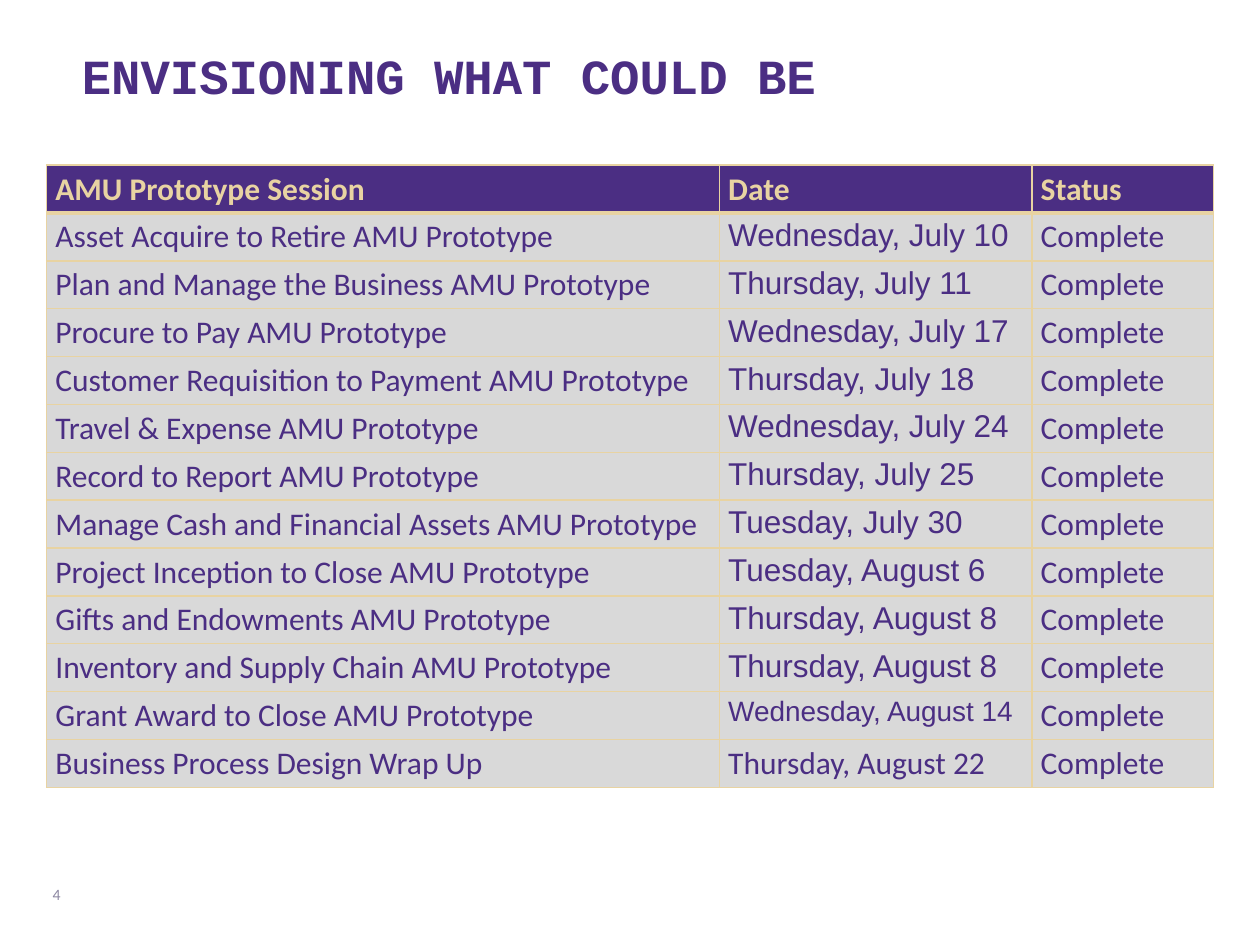
from lxml.etree import SubElement
from pptx import Presentation
from pptx.dml.color import RGBColor
from pptx.enum.text import MSO_ANCHOR as Anchor, PP_ALIGN as Align
from pptx.oxml.ns import qn
from pptx.util import Inches, Pt

COLORS = {
    "purple": "4B2E83",
    "gold": "E8D3A2",
    "upper_row": "D8D8D8",
    "lower_row": "D9D9D9",
    "number": "8D88A2",
}
HEADINGS = ["AMU Prototype Session", "Date", "Status"]
SESSIONS = [
    ("Asset Acquire to Retire AMU Prototype", "Wednesday, July 10"),
    ("Plan and Manage the Business AMU Prototype", "Thursday, July 11"),
    ("Procure to Pay AMU Prototype", "Wednesday, July 17"),
    ("Customer Requisition to Payment AMU Prototype", "Thursday, July 18"),
    ("Travel & Expense AMU Prototype", "Wednesday, July 24"),
    ("Record to Report AMU Prototype", "Thursday, July 25"),
    ("Manage Cash and Financial Assets AMU Prototype", "Tuesday, July 30"),
    ("Project Inception to Close AMU Prototype", "Tuesday, August 6"),
    ("Gifts and Endowments AMU Prototype", "Thursday, August 8"),
    ("Inventory and Supply Chain AMU Prototype", "Thursday, August 8"),
    ("Grant Award to Close AMU Prototype", "Wednesday, August 14"),
    ("Business Process Design Wrap Up", "Thursday, August 22"),
]
COLUMN_WIDTHS = [5.34, 2.48, 1.44]
ROW_HEIGHT = 0.3
UPPER_ROWS = 5


def rgb(name):
    return RGBColor.from_string(COLORS[name])


def style_text(text_frame, size, font_name, color, bold=False):
    for para in text_frame.paragraphs:
        for span in para.runs:
            span.font.size = Pt(size)
            span.font.name = font_name
            span.font.bold = bold
            span.font.color.rgb = rgb(color)


def set_margins(target):
    target.margin_left = target.margin_right = Inches(0.07)
    target.margin_top = target.margin_bottom = Inches(0.04)


def set_borders(cell, top, bottom):
    properties = cell._tc.get_or_add_tcPr()
    for side, width in (("L", 1), ("R", 1), ("T", top), ("B", bottom)):
        line = SubElement(properties, qn(f"a:ln{side}"), w=str(Pt(width)))
        fill = SubElement(line, qn("a:solidFill"))
        SubElement(fill, qn("a:srgbClr"), val=COLORS["gold"])


def add_title(page, left, top, width, height):
    title = page.shapes.title
    title.left, title.top = Inches(left), Inches(top)
    title.width, title.height = Inches(width), Inches(height)
    frame = title.text_frame
    frame.text = "ENVISIONING WHAT COULD BE"
    frame.vertical_anchor = Anchor.BOTTOM
    frame.paragraphs[0].alignment = Align.LEFT
    style_text(frame, 28, "Courier New", "purple", bold=True)


def add_sessions_table(page, left, top, width, row_height):
    rows = [HEADINGS] + [(name, date, "Complete") for name, date in SESSIONS]
    table = page.shapes.add_table(
        len(rows), len(HEADINGS), Inches(left), Inches(top),
        Inches(width), Inches(row_height * len(rows)),
    ).table
    for column, column_width in zip(table.columns, COLUMN_WIDTHS):
        column.width = Inches(column_width)
    for row_index, row in enumerate(rows):
        table.rows[row_index].height = Inches(row_height)
        header = row_index == 0
        shade = "upper_row" if row_index <= UPPER_ROWS else "lower_row"
        for column_index, text in enumerate(row):
            cell = table.cell(row_index, column_index)
            cell.text = text
            set_margins(cell)
            set_borders(cell, 3 if row_index == 1 else 1, 3 if header else 1)
            cell.fill.solid()
            cell.fill.fore_color.rgb = rgb("purple" if header else shade)
            is_arial = column_index == 1 and 0 < row_index < len(rows) - 1
            style_text(
                cell.text_frame,
                16 if text == "Wednesday, August 14" else 18,
                "Arial" if is_arial else "Calibri",
                "gold" if header else "purple",
                bold=header,
            )


def add_page_number(page, left, top, width, height):
    box = page.shapes.add_textbox(
        Inches(left), Inches(top), Inches(width), Inches(height))
    frame = box.text_frame
    frame.word_wrap = True
    frame.vertical_anchor = Anchor.MIDDLE
    set_margins(frame)
    frame.text = "4"
    frame.paragraphs[0].alignment = Align.RIGHT
    style_text(frame, 9, "Calibri", "number")


def main():
    deck = Presentation()
    deck.slide_width, deck.slide_height = Inches(10), Inches(7.5)
    page = deck.slides.add_slide(deck.slide_layouts.get_by_name("Title Only"))
    add_page_number(page, 0.2, 6.9, 0.35, 0.4)
    add_title(page, 0.55, 0.29, 8.83, 0.59)
    add_sessions_table(page, 0.37, 1.31, sum(COLUMN_WIDTHS), ROW_HEIGHT)
    deck.save("out.pptx")


if __name__ == "__main__":
    main()
